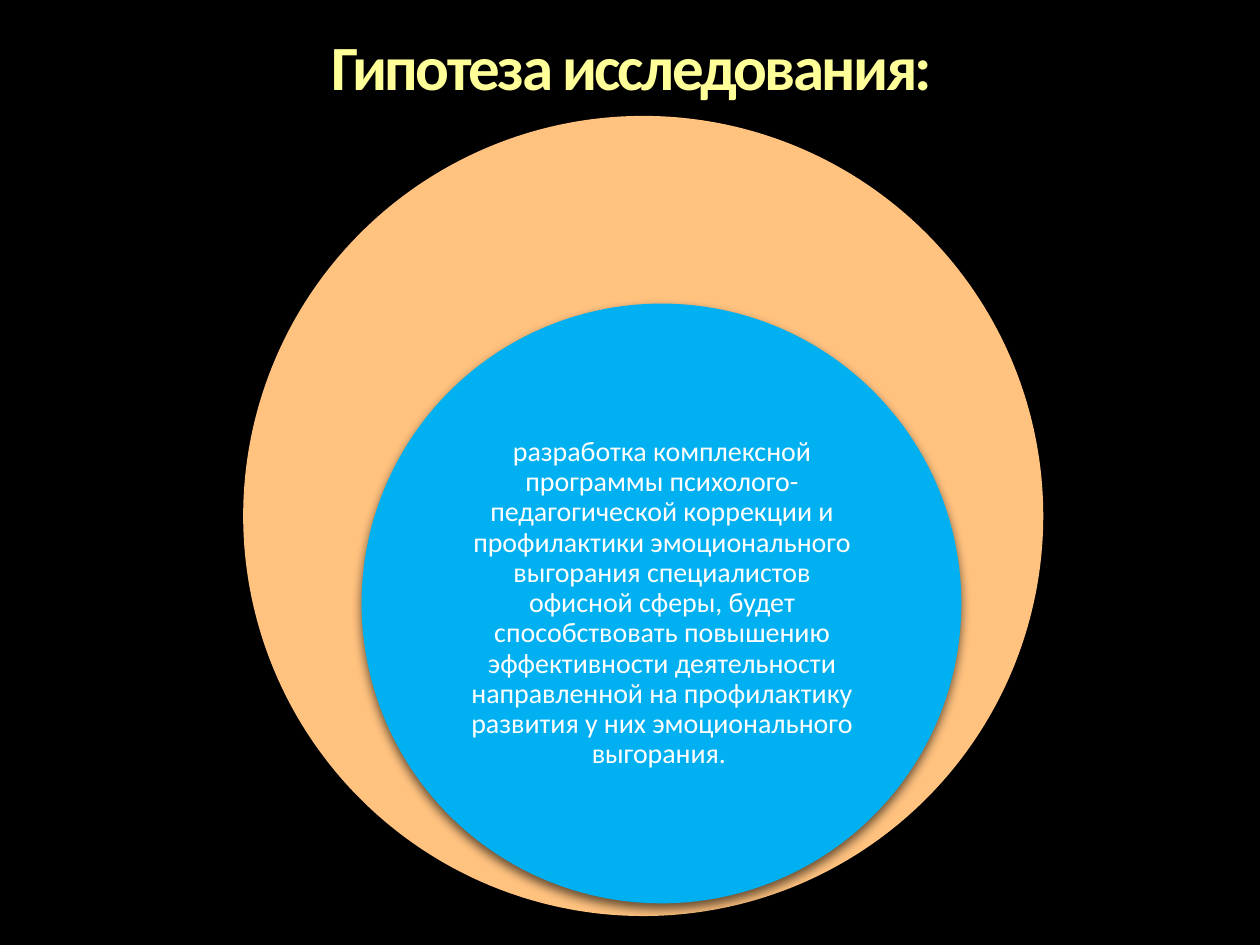
from lxml import etree
from pptx import Presentation
from pptx.dml.color import RGBColor
from pptx.enum.shapes import MSO_SHAPE
from pptx.enum.text import MSO_ANCHOR, PP_ALIGN
from pptx.oxml.ns import qn
from pptx.util import Inches, Pt

OVAL = MSO_SHAPE.OVAL
CENTER = PP_ALIGN.CENTER
TOP, MIDDLE = MSO_ANCHOR.TOP, MSO_ANCHOR.MIDDLE

COLORS = {
    "background": "000000",
    "title": "FFFF99",
    "outer": "FFC27F",
    "inner": "00B0F0",
    "text": "FFFFFF",
    "shadow": "000000",
}
FONT = "Calibri"
TITLE = "Гипотеза исследования:"
HYPOTHESIS = (
    "разработка комплексной программы психолого-педагогической коррекции "
    "и профилактики эмоционального выгорания специалистов офисной сферы, "
    "будет способствовать повышению эффективности деятельности направленной "
    "на профилактику развития у них эмоционального выгорания. "
)


def color(name):
    return RGBColor.from_string(COLORS[name])


def add_shadow(shape):
    """Give the shape a soft shadow that falls straight down."""
    shape.shadow.inherit = False
    effects = shape._element.spPr.find(qn("a:effectLst"))
    shadow = etree.SubElement(
        effects, qn("a:outerShdw"), blurRad=str(Pt(6)), dist=str(Pt(3)),
        dir="5400000", rotWithShape="0")
    tint = etree.SubElement(shadow, qn("a:srgbClr"), val=COLORS["shadow"])
    etree.SubElement(tint, qn("a:alpha"), val="60000")


def add_circle(slide, left, top, diameter, fill):
    circle = slide.shapes.add_shape(
        OVAL, Inches(left), Inches(top), Inches(diameter), Inches(diameter))
    circle.fill.solid()
    circle.fill.fore_color.rgb = color(fill)
    circle.line.fill.background()
    add_shadow(circle)


def add_text(slide, box, text, size, fill, anchor=TOP, inset=0, bold=False):
    """Add a centred text box and return its run."""
    frame = slide.shapes.add_textbox(*map(Inches, box)).text_frame
    frame.word_wrap = True
    frame.vertical_anchor = anchor
    frame.margin_left = frame.margin_right = Inches(inset)
    frame.margin_top = frame.margin_bottom = Inches(inset)
    frame.text = text
    paragraph = frame.paragraphs[0]
    paragraph.alignment = CENTER
    paragraph.line_spacing = 0.9
    run = paragraph.runs[0]
    run.font.name = FONT
    run.font.size = Pt(size)
    run.font.bold = bold
    run.font.color.rgb = color(fill)
    return run


def main():
    prs = Presentation()
    prs.slide_width, prs.slide_height = Inches(10), Inches(7.5)
    slide = prs.slides.add_slide(prs.slide_layouts[6])
    slide.background.fill.solid()
    slide.background.fill.fore_color.rgb = color("background")

    title = add_text(slide, (0.43, 0.29, 9.17, 0.55), TITLE, 36, "title", bold=True)
    title.font._element.set("spc", "-150")
    add_circle(slide, 1.93, 0.92, 6.35, "outer")
    add_circle(slide, 2.87, 2.41, 4.76, "inner")
    add_text(slide, (3.57, 3.6, 3.37, 2.38), HYPOTHESIS, 16, "text",
             anchor=MIDDLE, inset=0.12)

    prs.save("out.pptx")


if __name__ == "__main__":
    main()
